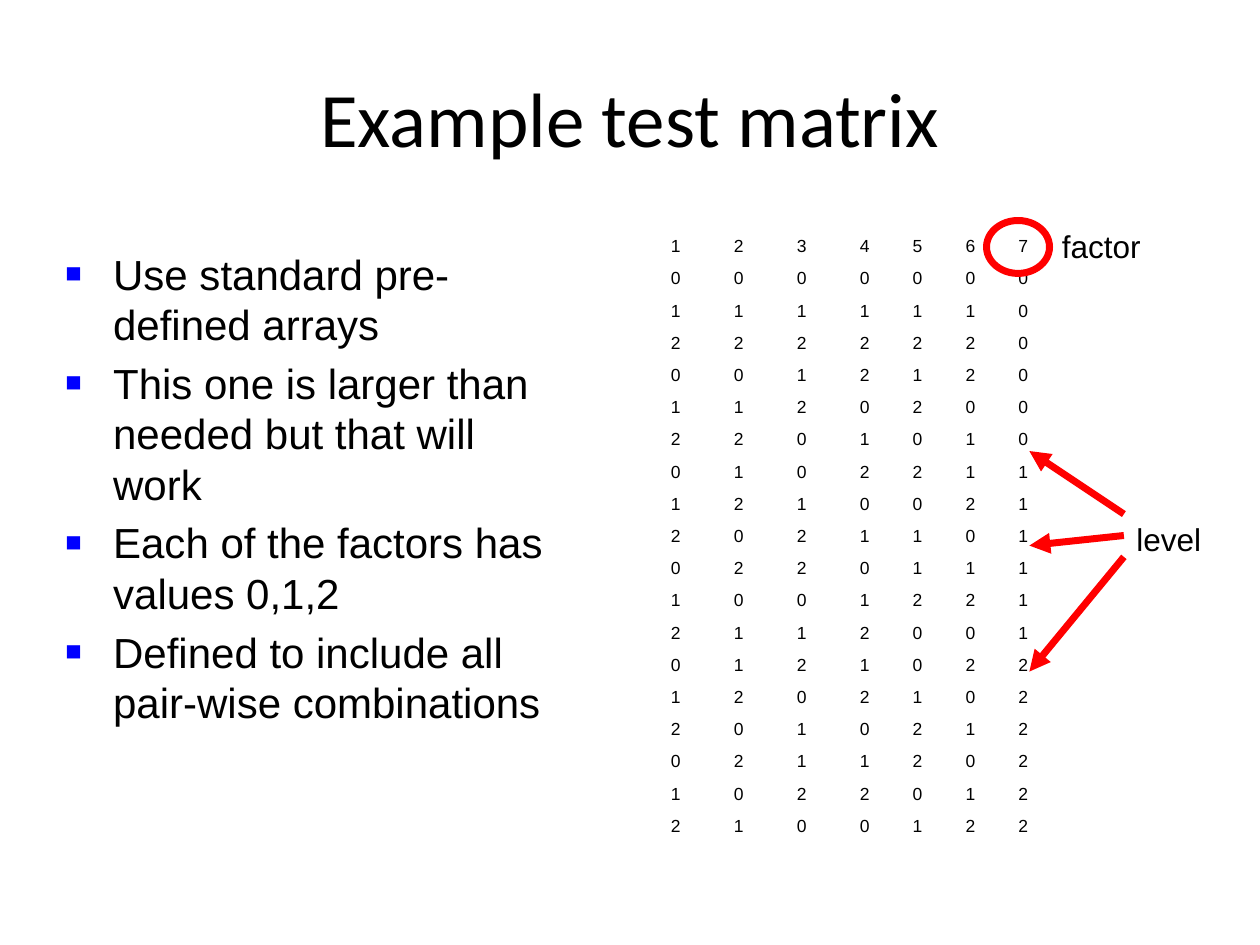
from lxml import etree
from pptx import Presentation
from pptx.dml.color import RGBColor
from pptx.enum.shapes import MSO_CONNECTOR, MSO_SHAPE
from pptx.enum.text import MSO_ANCHOR, MSO_AUTO_SIZE, PP_ALIGN
from pptx.oxml.ns import qn
from pptx.util import Inches, Pt

STRAIGHT = MSO_CONNECTOR.STRAIGHT
OVAL = MSO_SHAPE.OVAL
MIDDLE, BOTTOM = MSO_ANCHOR.MIDDLE, MSO_ANCHOR.BOTTOM
CENTER, RIGHT = PP_ALIGN.CENTER, PP_ALIGN.RIGHT
FIT_SHAPE = MSO_AUTO_SIZE.SHAPE_TO_FIT_TEXT
BLACK = RGBColor(0, 0, 0)
RED = RGBColor(255, 0, 0)
BULLET_BLUE = "0000FF"

TITLE = "Example test matrix"
BULLETS = [
    "Use standard pre-defined arrays",
    "This one is larger than needed but that will work",
    "Each of the factors has values 0,1,2",
    "Defined to include all pair-wise combinations",
]
MATRIX = [
    "1234567",
    "0000000", "1111110", "2222220",
    "0012120", "1120200", "2201010",
    "0102211", "1210021", "2021101",
    "0220111", "1001221", "2112001",
    "0121022", "1202102", "2010212",
    "0211202", "1022012", "2100122",
]
COLUMN_WIDTHS = [1.08, 0.5, 0.5, 0.5, 0.42, 0.42, 0.42]
ROW_HEIGHT = 0.24
LABELS = [("factor", 8.33, 1.75, 0.91), ("level", 8.92, 4.08, 0.78)]
ARROW_START_X, ARROW_END_X = 8.92, 8.17
ARROW_HEIGHTS = [(4.08, 3.58), (4.25, 4.33), (4.42, 5.33)]


def set_font(paragraph, size, name="Arial"):
    """Apply the font, size and black colour to a paragraph."""
    paragraph.font.name = name
    paragraph.font.size = Pt(size)
    paragraph.font.color.rgb = BLACK


def add_title(slide):
    """Place and format the title placeholder."""
    title = slide.shapes.title
    title.left, title.top = Inches(0.5), Inches(0.3)
    title.width, title.height = Inches(9), Inches(1.25)
    title.text_frame.text = TITLE
    title.text_frame.vertical_anchor = MIDDLE
    paragraph = title.text_frame.paragraphs[0]
    paragraph.alignment = CENTER
    set_font(paragraph, 44, "Calibri")


def add_matrix(slide):
    """Add the test matrix as an unfilled table."""
    frame = slide.shapes.add_table(
        len(MATRIX), len(COLUMN_WIDTHS), Inches(4.42), Inches(1.83),
        Inches(sum(COLUMN_WIDTHS)), Inches(ROW_HEIGHT * len(MATRIX)))
    table = frame.table
    table.first_row = table.horz_banding = False
    for column, width in zip(table.columns, COLUMN_WIDTHS):
        column.width = Inches(width)
    for row, values in zip(table.rows, MATRIX):
        row.height = Inches(ROW_HEIGHT)
        for cell, value in zip(row.cells, values):
            cell.text = value
            cell.fill.background()
            cell.vertical_anchor = BOTTOM
            paragraph = cell.text_frame.paragraphs[0]
            paragraph.alignment = RIGHT
            set_font(paragraph, 10)


def add_bullets(slide):
    """Add the bulleted list with blue square markers."""
    box = slide.shapes.add_textbox(
        Inches(0.42), Inches(1.92), Inches(4.17), Inches(4.5))
    text_frame = box.text_frame
    text_frame.word_wrap = True
    for index, text in enumerate(BULLETS):
        paragraph = text_frame.add_paragraph() if index else text_frame.paragraphs[0]
        paragraph.text = text
        if index:
            paragraph.space_before = Pt(4.8)
        properties = paragraph._p.get_or_add_pPr()
        properties.set("marL", str(Inches(0.38)))
        properties.set("indent", str(-Inches(0.38)))
        color = etree.SubElement(properties, qn("a:buClr"))
        etree.SubElement(color, qn("a:srgbClr"), val=BULLET_BLUE)
        etree.SubElement(properties, qn("a:buSzPct"), val="65000")
        etree.SubElement(properties, qn("a:buFont"), typeface="Arial")
        etree.SubElement(properties, qn("a:buChar"), char="■")
        set_font(paragraph, 24)


def add_annotations(slide):
    """Add the factor ring, the labels and the level arrows."""
    ring = slide.shapes.add_shape(
        OVAL, Inches(7.83), Inches(1.75), Inches(0.5), Inches(0.42))
    ring.shadow.inherit = False
    ring.fill.background()
    ring.line.color.rgb = RED
    ring.line.width = Pt(4)

    for text, left, top, width in LABELS:
        label = slide.shapes.add_textbox(
            Inches(left), Inches(top), Inches(width), Inches(0.43))
        label.text_frame.text = text
        label.text_frame.word_wrap = False
        label.text_frame.auto_size = FIT_SHAPE
        set_font(label.text_frame.paragraphs[0], 18)

    for start_y, end_y in ARROW_HEIGHTS:
        arrow = slide.shapes.add_connector(
            STRAIGHT, Inches(ARROW_START_X), Inches(start_y),
            Inches(ARROW_END_X), Inches(end_y))
        arrow.line.color.rgb = RED
        arrow.line.width = Pt(4)
        etree.SubElement(arrow.line._get_or_add_ln(), qn("a:tailEnd"), type="triangle")
        etree.SubElement(arrow._element.spPr, qn("a:effectLst"))


def main():
    """Build the test matrix slide."""
    presentation = Presentation()
    presentation.slide_width = Inches(10)
    presentation.slide_height = Inches(7.5)
    slide = presentation.slides.add_slide(presentation.slide_layouts[5])
    add_title(slide)
    add_matrix(slide)
    add_bullets(slide)
    add_annotations(slide)
    presentation.save("out.pptx")


if __name__ == "__main__":
    main()
